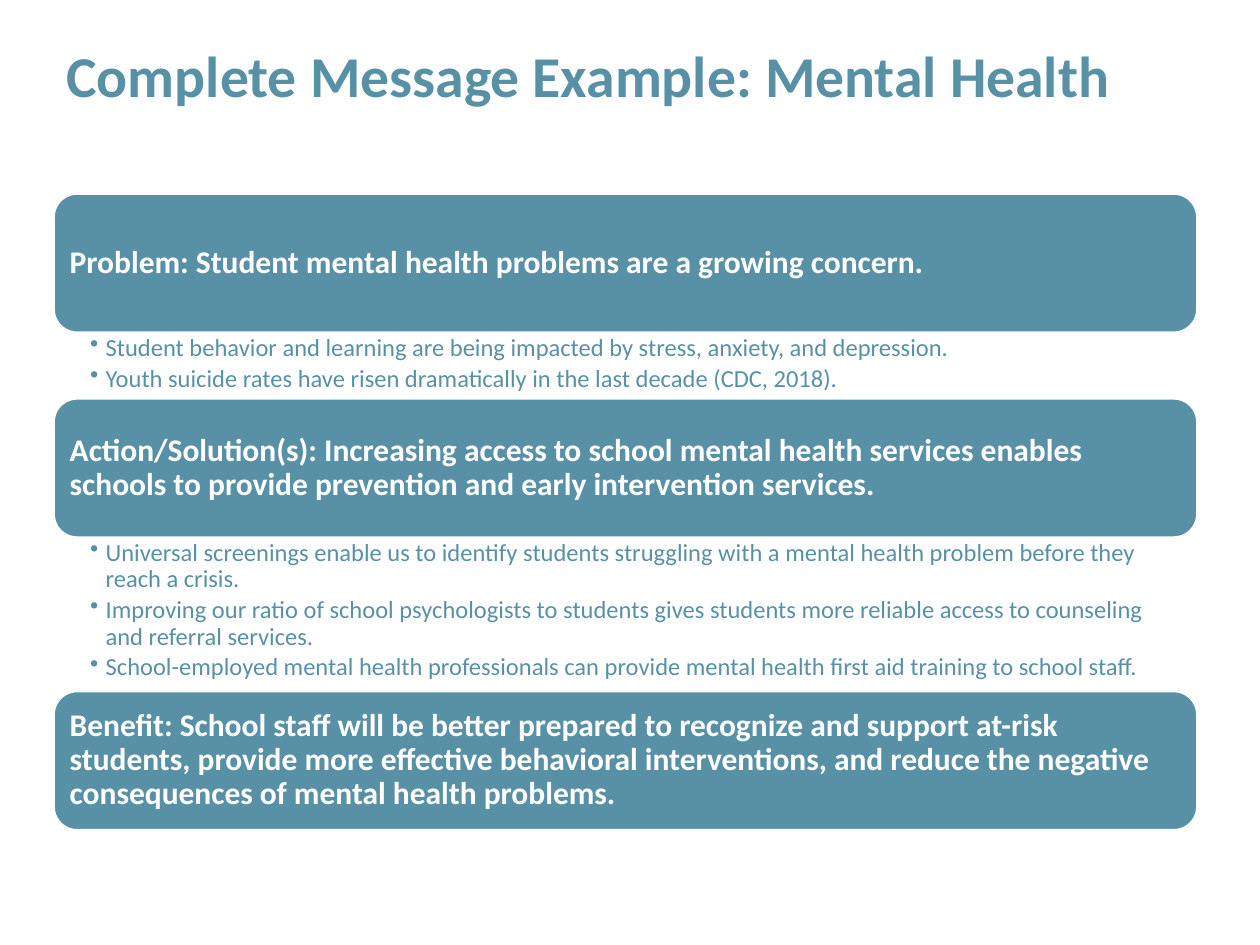
import pptx
import pptx.dml.color
import pptx.enum.shapes
import pptx.enum.text
import pptx.oxml.ns
import pptx.util
from lxml import etree

Cm = pptx.util.Cm
Pt = pptx.util.Pt
TEAL = pptx.dml.color.RGBColor(0x58, 0x91, 0xA6)
WHITE = pptx.dml.color.RGBColor(0xFF, 0xFF, 0xFF)
MIDDLE = pptx.enum.text.MSO_ANCHOR.MIDDLE
TOP = pptx.enum.text.MSO_ANCHOR.TOP
ROUND = pptx.enum.shapes.MSO_SHAPE.ROUNDED_RECTANGLE
LEFT = pptx.enum.text.PP_ALIGN.LEFT

LOOKS = {
    "title": {
        "frame": {"vertical_anchor": MIDDLE},
        "para": {"line_spacing": 0.9},
        "font": {"name": "Calibri", "size": Pt(33), "bold": True},
        "color": TEAL,
    },
    "head": {
        "frame": {"vertical_anchor": MIDDLE, "margin_left": Cm(0.18), "margin_right": Cm(0.18),
                  "margin_top": Cm(0.18), "margin_bottom": Cm(0.18)},
        "para": {"line_spacing": 0.9, "alignment": LEFT},
        "font": {"name": "Calibri", "size": Pt(18), "bold": True},
        "color": WHITE,
    },
    "list": {
        "frame": {"vertical_anchor": TOP, "margin_left": Cm(0.73), "margin_right": Cm(0.36),
                  "margin_top": Cm(0.06), "margin_bottom": Cm(0.06)},
        "para": {"line_spacing": 0.9, "space_after": Pt(2.4), "level": 1},
        "font": {"name": "Calibri", "size": Pt(14), "bold": False},
        "color": TEAL,
    },
}

PARTS = [
    ("Problem: Student mental health problems are a growing concern.", 1.34, [
        "Student behavior and learning are being impacted by stress, anxiety, and depression.",
        "Youth suicide rates have risen dramatically in the last decade (CDC, 2018).",
    ]),
    ("Action/Solution(s): Increasing access to school mental health services enables schools "
     "to provide prevention and early intervention services.", 3.11, [
        "Universal screenings enable us to identify students struggling with a mental health "
        "problem before they reach a crisis.",
        "Improving our ratio of school psychologists to students gives students more reliable "
        "access to counseling and referral services.",
        "School-employed mental health professionals can provide mental health first aid "
        "training to school staff.",
    ]),
    ("Benefit: School staff will be better prepared to recognize and support at-risk students, "
     "provide more effective behavioral interventions, and reduce the negative consequences of "
     "mental health problems.", 0, []),
]


def write(shape, lines, kind):
    look = LOOKS[kind]
    frame = shape.text_frame
    frame.word_wrap = True
    for key, value in look["frame"].items():
        setattr(frame, key, value)
    for i, line in enumerate(lines):
        para = frame.add_paragraph() if i else frame.paragraphs[0]
        para.text = line
        if kind == "list":
            props = para._p.get_or_add_pPr()
            props.set("marL", str(Cm(0.31)))
            props.set("indent", str(-Cm(0.31)))
            etree.SubElement(props, pptx.oxml.ns.qn("a:buChar"), char="•")
        for key, value in look["para"].items():
            setattr(para, key, value)
        font = para.runs[0].font
        for key, value in look["font"].items():
            setattr(font, key, value)
        font.color.rgb = look["color"]


deck = pptx.Presentation()
deck.slide_width = Cm(25.4)
deck.slide_height = Cm(19.05)
slide = deck.slides.add_slide(deck.slide_layouts[6])
shapes = slide.shapes

left, wide, tall = Cm(1.09), Cm(23.04), Cm(2.79)
title = shapes.add_textbox(left, 0, Cm(22.86), Cm(3.18))
write(title, ["Complete Message Example: Mental Health"], "title")

top = Cm(3.91)
for head, room, points in PARTS:
    bar = shapes.add_shape(ROUND, left, top, wide, tall)
    bar.shadow.inherit = False
    bar.fill.solid()
    bar.fill.fore_color.rgb = TEAL
    bar.line.color.rgb = WHITE
    bar.line.width = Pt(1)
    write(bar, [head], "head")
    top += tall
    if points:
        box = shapes.add_textbox(left, top, wide, Cm(room))
        write(box, points, "list")
        top += Cm(room)

deck.save("out.pptx")
